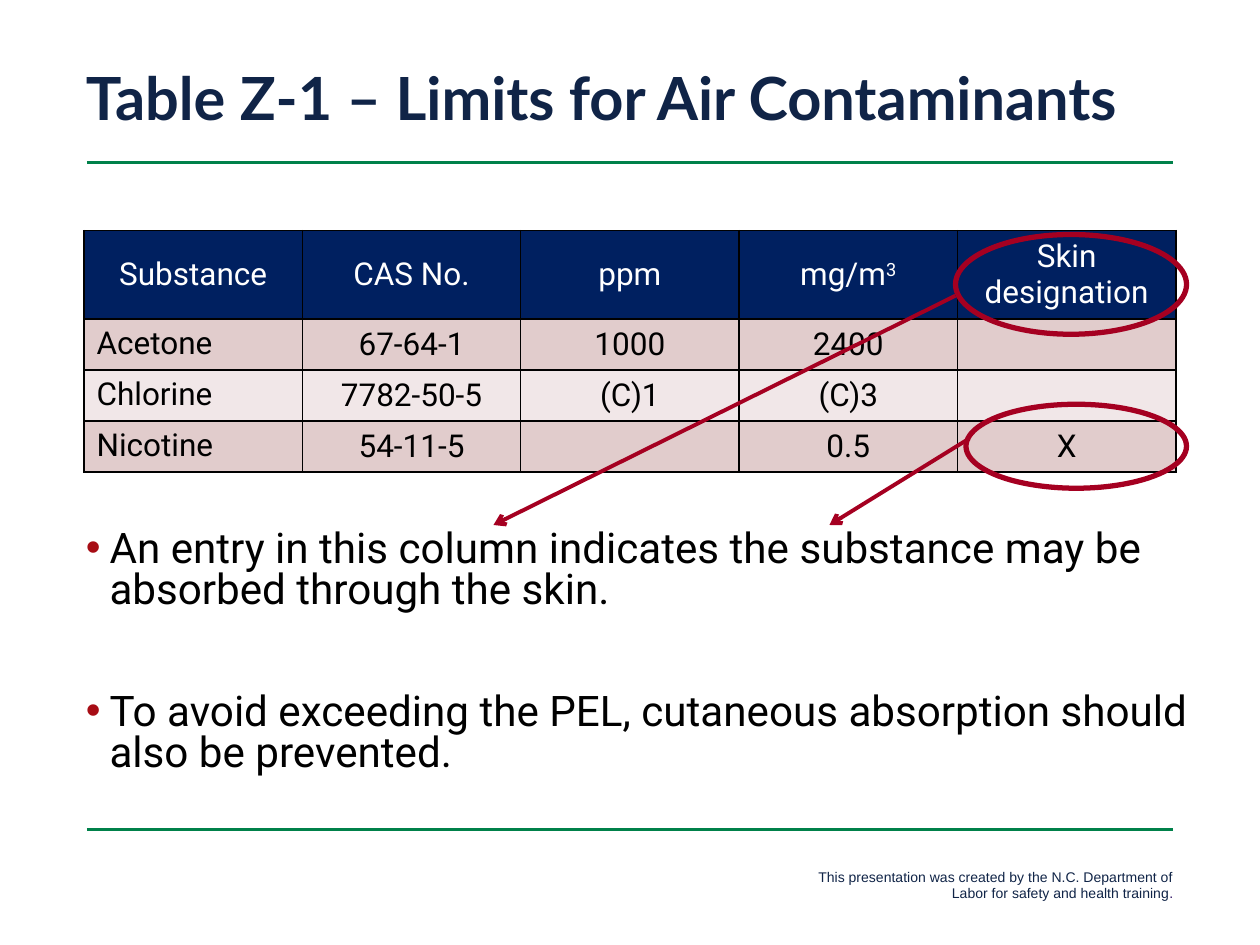
from dataclasses import dataclass

from lxml import etree
from pptx import Presentation
from pptx.dml.color import RGBColor
from pptx.enum.shapes import MSO_CONNECTOR, MSO_SHAPE
from pptx.enum.text import MSO_ANCHOR, PP_ALIGN
from pptx.oxml.ns import qn
from pptx.util import Pt

STRAIGHT = MSO_CONNECTOR.STRAIGHT
ELLIPSE = MSO_SHAPE.OVAL
LEFT, CENTER, RIGHT = PP_ALIGN.LEFT, PP_ALIGN.CENTER, PP_ALIGN.RIGHT
TOP, MIDDLE = MSO_ANCHOR.TOP, MSO_ANCHOR.MIDDLE


@dataclass(frozen=True)
class Theme:
    navy: str = "102447"
    violet: str = "2B0E62"
    green: str = "00814A"
    crimson: str = "A50021"
    bullet: str = "A70D15"
    black: str = "000000"
    white: str = "FFFFFF"
    header: str = "002060"
    bands: tuple = ("E1CCCC", "F1E7E8")
    title_font: str = "Lato"
    body_font: str = "Roboto"
    footer_font: str = "Arial"
    title_size: float = 34
    body_size: float = 24.1
    table_size: float = 18
    footer_size: float = 8


THEME = Theme()
ROWS = [
    ["Substance", "CAS No.", "ppm", "mg/m", "Skin designation"],
    ["Acetone", "67-64-1", "1000", "2400", ""],
    ["Chlorine", "7782-50-5", "(C)1", "(C)3", ""],
    ["Nicotine", "54-11-5", "", "0.5", "X"],
]
BULLETS = [
    "An entry in this column indicates the substance may be absorbed through the skin.",
    "To avoid exceeding the PEL, cutaneous absorption should also be prevented.",
]


def rgb(color):
    return RGBColor.from_string(color)


def apply(target, values):
    for name, value in values.items():
        setattr(target, name, value)


def add_span(para, text, color, font, size, bold=False):
    span = para.add_run()
    span.text = text
    apply(span.font, {"name": font, "size": Pt(size), "bold": bold})
    span.font.color.rgb = rgb(color)
    return span


def add_text_frame(page, left, top, width, height):
    box = page.shapes.add_textbox(Pt(left), Pt(top), Pt(width), Pt(height))
    apply(box.text_frame, {"word_wrap": True, "vertical_anchor": TOP})
    return box.text_frame


def add_line(page, start, end, color, width, arrow=False):
    line = page.shapes.add_connector(STRAIGHT, *map(Pt, start + end))
    line.line.width = Pt(width)
    line.line.color.rgb = rgb(color)
    if arrow:
        outline = line.line._get_or_add_ln()
        etree.SubElement(outline, qn("a:tailEnd"), type="arrow")
    etree.SubElement(line._element.spPr, qn("a:effectLst"))


def add_ring(page, left, top, width, height):
    ring = page.shapes.add_shape(ELLIPSE, Pt(left), Pt(top), Pt(width), Pt(height))
    ring.shadow.inherit = False
    ring.fill.background()
    ring.line.width = Pt(3)
    ring.line.color.rgb = rgb(THEME.crimson)


def add_borders(cell):
    properties = cell._tc.get_or_add_tcPr()
    for side in ("lnL", "lnR", "lnT", "lnB"):
        border = etree.SubElement(properties, qn(f"a:{side}"), w=str(Pt(1)))
        fill = etree.SubElement(border, qn("a:solidFill"))
        etree.SubElement(fill, qn("a:srgbClr"), val=THEME.black)


def fill_cell(cell, text, row, column):
    is_name = row > 0 and column == 0
    add_borders(cell)
    cell.fill.solid()
    cell.fill.fore_color.rgb = rgb(THEME.bands[(row - 1) % 2] if row else THEME.header)
    cell.vertical_anchor = TOP if is_name else MIDDLE
    para = cell.text_frame.paragraphs[0]
    para.alignment = LEFT if is_name else CENTER
    style = (THEME.black if row else THEME.white, THEME.body_font, THEME.table_size)
    if text:
        add_span(para, text, *style)
    if text == "mg/m":
        power = add_span(para, "3", *style)
        power._r.get_or_add_rPr().set("baseline", "30000")


def add_limits_table(page):
    frame = page.shapes.add_table(
        len(ROWS), len(ROWS[0]), Pt(48), Pt(131.8), Pt(624), Pt(138)
    )
    table = frame.table
    apply(table, {"first_row": False, "horz_banding": False})
    for column in table.columns:
        column.width = Pt(124.8)
    for index, row in enumerate(table.rows):
        row.height = Pt(29.16 if index else 50.3)
    for row, texts in enumerate(ROWS):
        for column, text in enumerate(texts):
            fill_cell(table.cell(row, column), text, row, column)


def add_title(page):
    para = add_text_frame(page, 42, 36, 666, 85).paragraphs[0]
    para.line_spacing = 0.9
    add_span(para, "Table Z-1 – Limits for Air Contaminants",
             THEME.navy, THEME.title_font, THEME.title_size, True)


def add_bullets(page):
    frame = add_text_frame(page, 42, 300, 650, 156)
    for index, text in enumerate(BULLETS):
        para = frame.add_paragraph() if index else frame.paragraphs[0]
        apply(para, {"line_spacing": 0.8, "space_before": Pt(47 if index else 0)})
        properties = para._p.get_or_add_pPr()
        properties.set("marL", str(Pt(13.5)))
        properties.set("indent", str(-Pt(13.5)))
        color = etree.SubElement(properties, qn("a:buClr"))
        etree.SubElement(color, qn("a:srgbClr"), val=THEME.bullet)
        etree.SubElement(properties, qn("a:buFont"), typeface=THEME.footer_font)
        etree.SubElement(properties, qn("a:buChar"), char="•")
        add_span(para, text, THEME.black, THEME.body_font, THEME.body_size)


def add_footer(page):
    para = add_text_frame(page, 443.5, 492.5, 234, 27).paragraphs[0]
    para.alignment = RIGHT
    note = "This presentation was created by the N.C. Department of Labor for safety and health training"
    for text, color in ((note, THEME.navy), (".", THEME.violet)):
        add_span(para, text, color, THEME.footer_font, THEME.footer_size)


def main():
    deck = Presentation()
    apply(deck, {"slide_width": Pt(720), "slide_height": Pt(540)})
    page = deck.slides.add_slide(deck.slide_layouts[6])
    for top in (93, 474):
        add_line(page, (49.7, top), (670.3, top), THEME.green, 2)
    add_footer(page)
    add_limits_table(page)
    add_ring(page, 546, 134, 132, 57)
    add_line(page, (546, 169), (282, 300), THEME.crimson, 2.25, arrow=True)
    add_bullets(page)
    add_ring(page, 552, 231, 126, 48)
    add_line(page, (554, 250.5), (474, 300), THEME.crimson, 2.25, arrow=True)
    add_title(page)
    deck.save("out.pptx")


if __name__ == "__main__":
    main()
